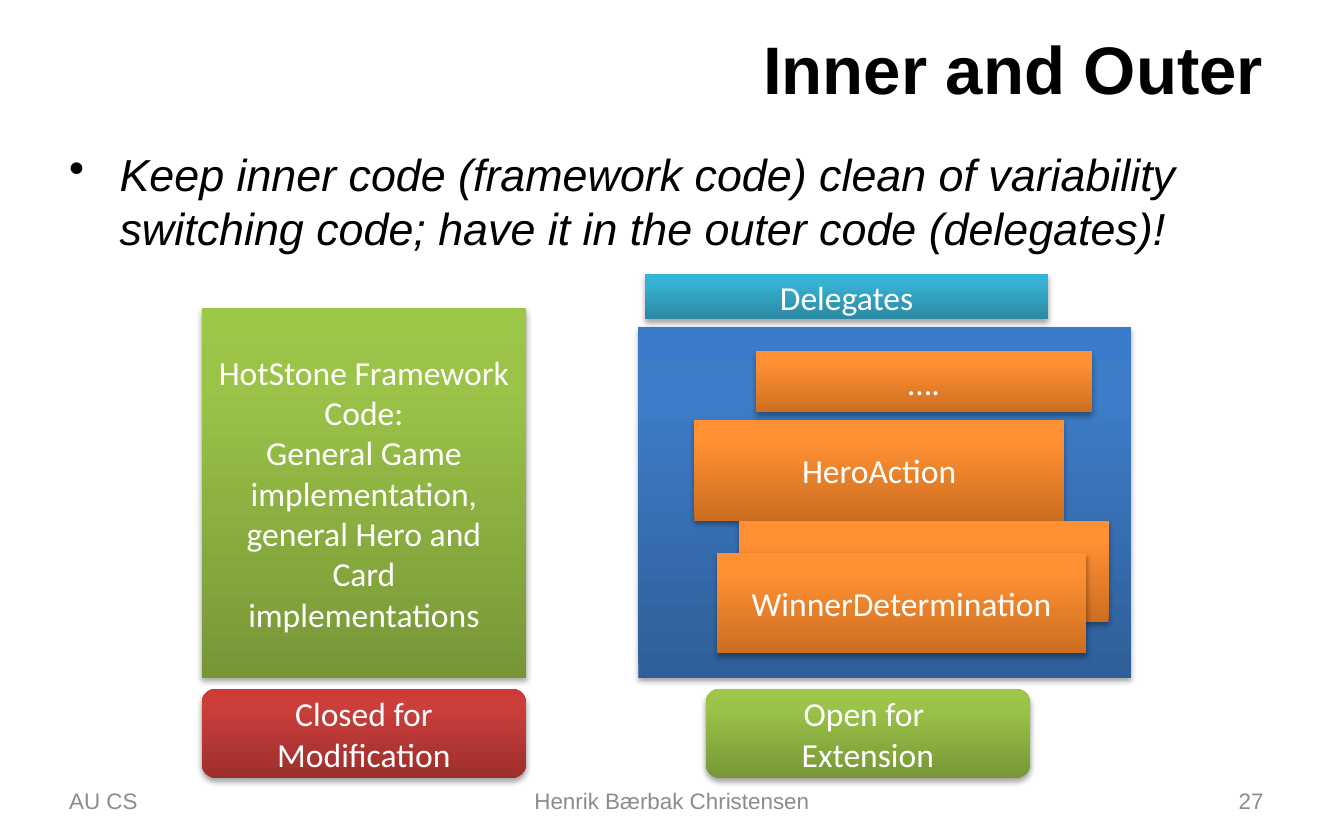
import pptx
import pptx.dml.color
import pptx.enum.shapes
import pptx.enum.text
import pptx.oxml
import pptx.oxml.ns
import pptx.util

Pt = pptx.util.Pt
ALIGN = pptx.enum.text.PP_ALIGN
ANCHOR = pptx.enum.text.MSO_ANCHOR
SHAPE = pptx.enum.shapes.MSO_SHAPE
NAMESPACE = pptx.oxml.ns.nsdecls("a")

COLORS = {"text": "000000", "footer": "8C8C8C", "label": "FFFFFF"}

# Gradient colours from the bottom edge to the top edge
GRADIENTS = {
    "green": ("779737", "9BC348", "9DC746"),
    "blue": ("2F5F99", "3D7CC7", "3A7CCB"),
    "teal": ("2A88A2", "37B1D2", "34B4D6"),
    "orange": ("CC6E20", "FF9034", "FF9136"),
    "red": ("9C2F2D", "CB3E3A", "CE3B37"),
}
STOPS = (0, 80, 100)


def style_paragraph(para, font, size, color, align):
    para.alignment = align
    para.font.name = font
    para.font.size = Pt(size)
    para.font.color.rgb = pptx.dml.color.RGBColor.from_string(COLORS[color])


def add_text(page, text, left, top, width, height, size, color="text",
             align=ALIGN.LEFT, anchor=ANCHOR.MIDDLE):
    box = page.shapes.add_textbox(Pt(left), Pt(top), Pt(width), Pt(height))
    box.text_frame.word_wrap = True
    box.text_frame.vertical_anchor = anchor
    para = box.text_frame.paragraphs[0]
    para.text = text
    style_paragraph(para, "Arial", size, color, align)
    return para


def add_bullet(page, text, left, top, width, height):
    para = add_text(page, text, left, top, width, height, 24,
                    anchor=ANCHOR.TOP)
    para.font.italic = True
    properties = para._p.get_or_add_pPr()
    properties.set("marL", str(Pt(27)))
    properties.set("indent", str(-Pt(27)))
    bullet = pptx.oxml.parse_xml(f'<a:buChar {NAMESPACE} char="•"/>')
    properties.insert(0, bullet)


def fill_gradient(shape, name):
    shape.fill.gradient()
    shape.fill.gradient_angle = 90
    stop_list = shape._element.spPr.find(".//" + pptx.oxml.ns.qn("a:gsLst"))
    for stop in list(stop_list):
        stop_list.remove(stop)
    for position, color in zip(STOPS, GRADIENTS[name]):
        stop_list.append(pptx.oxml.parse_xml(
            f'<a:gs {NAMESPACE} pos="{position * 1000}">'
            f'<a:srgbClr val="{color}"/></a:gs>'))


def add_shadow(shape):
    shape.shadow.inherit = False
    effects = shape._element.spPr.find(pptx.oxml.ns.qn("a:effectLst"))
    effects.append(pptx.oxml.parse_xml(
        f'<a:outerShdw {NAMESPACE} blurRad="{Pt(3.1)}" dist="{Pt(1.8)}" '
        'dir="5400000" rotWithShape="0"><a:srgbClr val="000000">'
        '<a:alpha val="35000"/></a:srgbClr></a:outerShdw>'))


def add_block(page, text, gradient, left, top, width, height,
              kind=SHAPE.RECTANGLE):
    shape = page.shapes.add_shape(kind, Pt(left), Pt(top), Pt(width), Pt(height))
    fill_gradient(shape, gradient)
    shape.line.fill.background()
    add_shadow(shape)
    if text:
        frame = shape.text_frame
        frame.word_wrap = True
        frame.vertical_anchor = ANCHOR.MIDDLE
        frame.text = text
        for para in frame.paragraphs:
            style_paragraph(para, "Calibri", 18, "label", ALIGN.CENTER)


def main():
    deck = pptx.Presentation()
    deck.slide_width, deck.slide_height = Pt(720), Pt(450)
    page = deck.slides.add_slide(deck.slide_layouts[6])

    # Title and main point
    title = add_text(page, "Inner and Outer", 36, 13, 648, 47, 36,
                     align=ALIGN.RIGHT)
    title.font.bold = True
    add_bullet(page, "Keep inner code (framework code) clean of variability "
               "switching code; have it in the outer code (delegates)!",
               30, 75, 654, 340)

    # Footer
    for text, left, width, align in (
            ("AU CS", 30, 168, ALIGN.LEFT),
            ("Henrik Bærbak Christensen", 246, 228, ALIGN.CENTER),
            ("27", 516, 168, ALIGN.RIGHT)):
        add_text(page, text, left, 417, width, 24, 12, "footer", align)

    # Inner framework code
    add_block(page, "HotStone Framework Code:\nGeneral Game implementation, "
              "general Hero and Card implementations",
              "green", 108, 165, 174, 198)

    # Outer code with its delegates
    add_block(page, "", "blue", 342, 175, 264, 188)
    add_block(page, "Delegates", "teal", 345.6, 147, 216, 24)
    for text, left, top in (("HeroAction", 372, 225),
                            ("", 396, 279),
                            ("WinnerDetermination", 384, 296)):
        add_block(page, text, "orange", left, top, 198, 54)
    add_block(page, "….", "orange", 405, 188, 180, 33)

    # Verdict below each side
    for text, gradient, left in (
            ("Closed for Modification", "red", 108),
            ("Open for \vExtension", "green", 378)):
        add_block(page, text, gradient, left, 369, 174, 48,
                  SHAPE.ROUNDED_RECTANGLE)

    deck.save("out.pptx")


if __name__ == "__main__":
    main()
